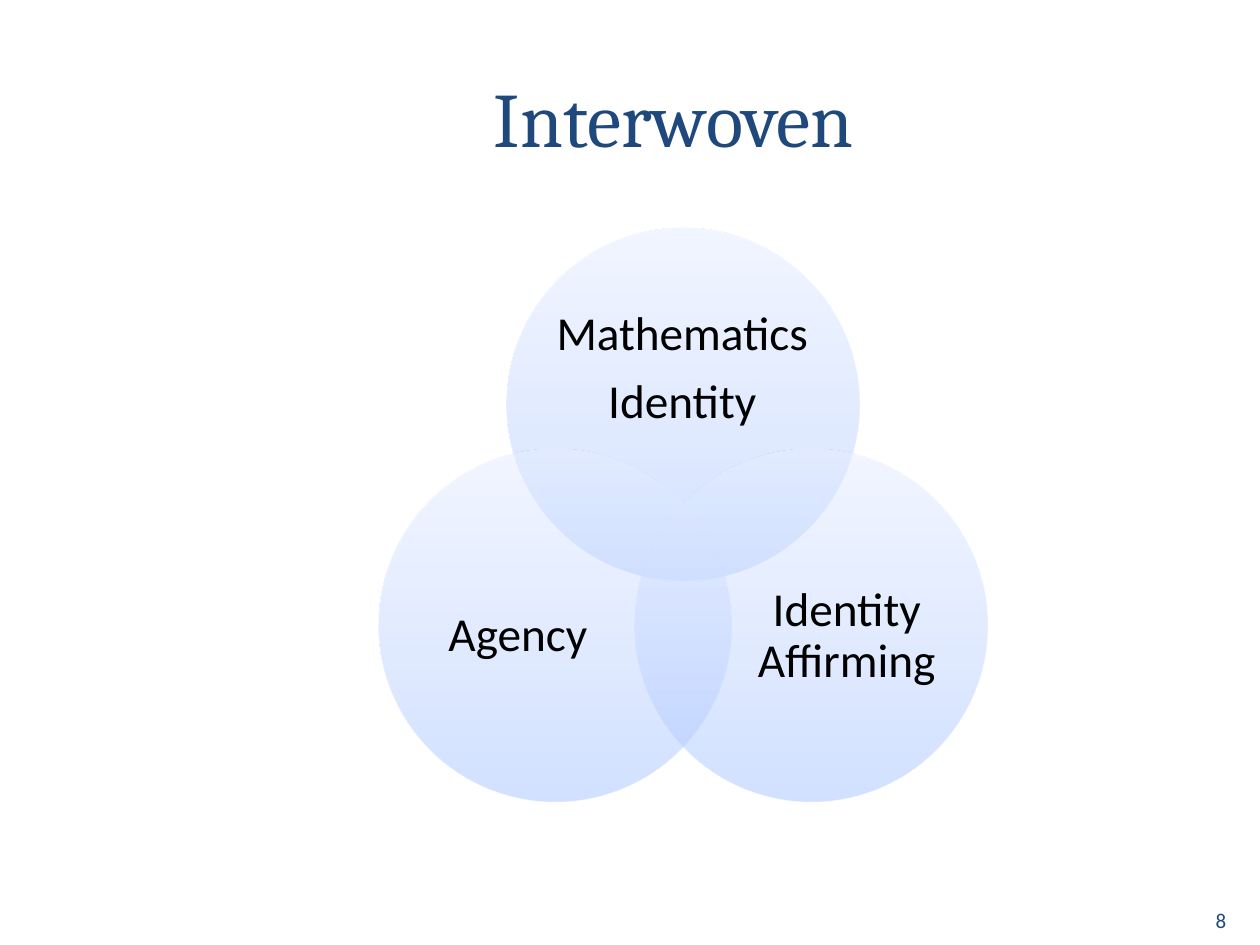
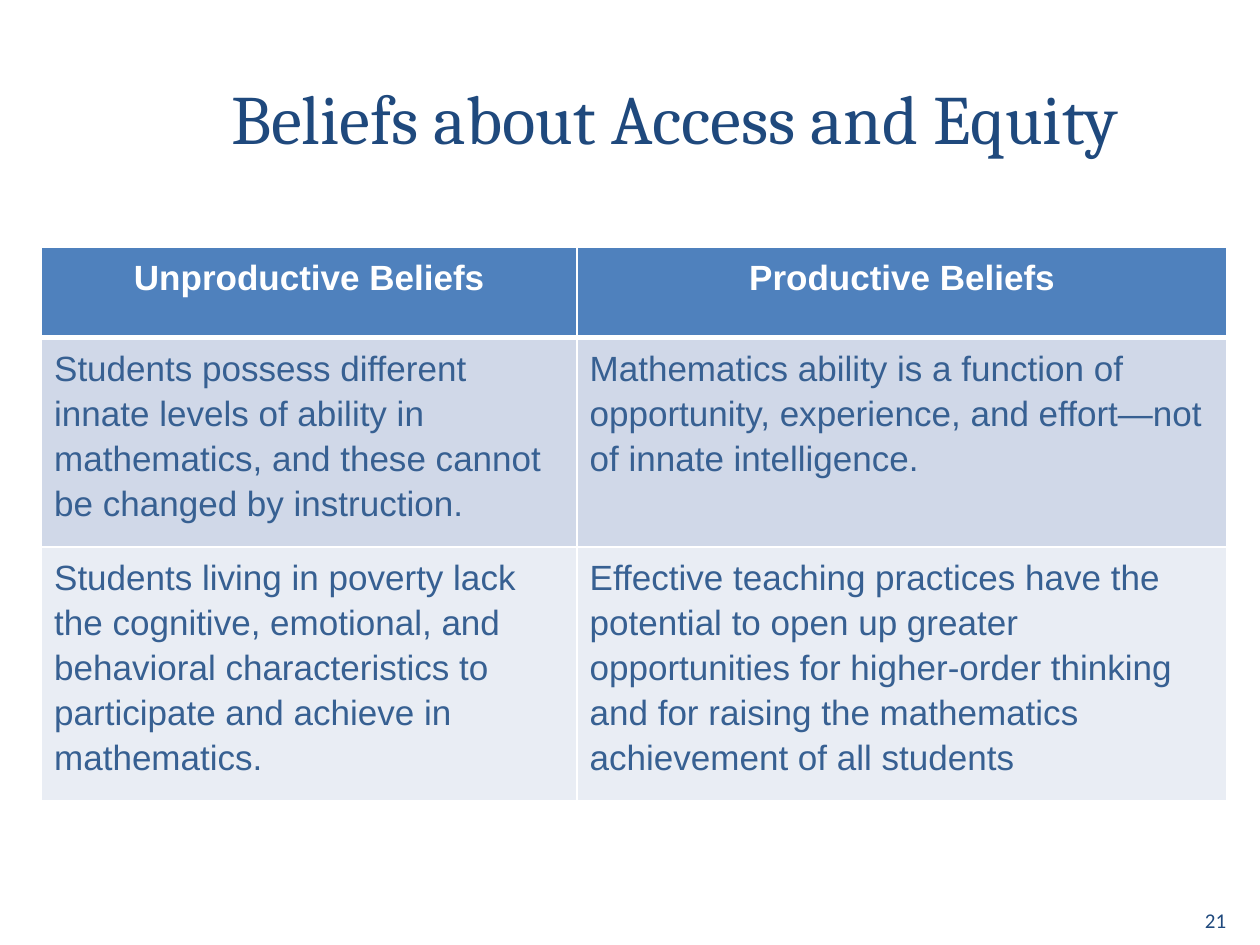
import math
from dataclasses import dataclass

from lxml import etree
from pptx import Presentation
from pptx import util as u
from pptx.dml.color import RGBColor
from pptx.enum import shapes, text
from pptx.oxml.ns import qn
from pptx.util import Inches

COLORS = {
    "navy": "1F497D",
    "black": "000000",
    "white": "FFFFFF",
    "header": "4F81BD",
    "body_text": "376092",
    "band_dark": "D0D8E8",
    "band_light": "E9EDF4",
    "circle_deep": "A4C4FF",
    "circle_mid": "BFD4FF",
    "circle_pale": "E6EEFF",
}
TITLE_FONT, LABEL_FONT, TABLE_FONT = "Cambria", "Calibri", "Arial"
CIRCLE_STOPS = [(0, "circle_deep"), (35, "circle_mid"), (100, "circle_pale")]
CIRCLE_SIZE = 2.8
RING_CENTER, RING_RADIUS = (5.42, 4.38), 1.17


@dataclass
class Box:
    left: float
    top: float
    width: float
    height: float

    def lengths(self) -> list:
        return [Inches(n) for n in (self.left, self.top, self.width, self.height)]


@dataclass
class TextStyle:
    font: str
    size: float
    color: str
    align: text.PP_ALIGN = text.PP_ALIGN.CENTER
    bold: bool = False
    line_spacing: float = 1.0
    space_after: float = 0


@dataclass
class VennCircle:
    angle: int
    label_box: Box
    lines: list[str]


TITLE_BOX = Box(1.33, 0.3, 8.17, 1.25)
NUMBER_BOX = Box(7.5, 7.1, 2.33, 0.4)
NUMBER_STYLE = TextStyle(LABEL_FONT, 12, "navy", text.PP_ALIGN.RIGHT)
LABEL_STYLE = TextStyle(LABEL_FONT, 27, "black", line_spacing=0.9, space_after=9.45)
HEADER_STYLE = TextStyle(TABLE_FONT, 20, "white", bold=True, line_spacing=1.15)
BODY_STYLE = TextStyle(TABLE_FONT, 20, "body_text", text.PP_ALIGN.LEFT, line_spacing=1.15)

CIRCLES = [
    VennCircle(-90, Box(4.39, 2.3, 2.05, 1.26), ["Mathematics", "Identity"]),
    VennCircle(30, Box(5.88, 4.28, 1.68, 1.54), ["Identity Affirming"]),
    VennCircle(150, Box(3.27, 4.28, 1.68, 1.54), ["Agency"]),
]

TABLE_BOX = Box(0.33, 1.96, 9.41, 4.35)
COLUMN_WIDTHS = [4.25, 5.16]
ROW_HEIGHTS = [0.72, 1.66, 1.97]
ROW_FILLS = ["header", "band_dark", "band_light"]
BELIEFS = [
    ("Unproductive Beliefs", "Productive Beliefs"),
    (
        "Students possess different innate levels of ability in mathematics, "
        "and these cannot be changed by instruction.",
        "Mathematics ability is a function of opportunity, experience, "
        "and effort—not of innate intelligence.",
    ),
    (
        "Students living in poverty lack the cognitive, emotional, and behavioral "
        "characteristics to participate and achieve in mathematics.",
        "Effective teaching practices have the potential to open up greater "
        "opportunities for higher-order thinking and for raising the mathematics "
        "achievement of all students",
    ),
]


def rgb(name: str) -> RGBColor:
    return RGBColor.from_string(COLORS[name])


def write_lines(frame, lines: list[str], style: TextStyle) -> None:
    frame.text = "\n".join(lines)
    for paragraph in frame.paragraphs:
        paragraph.alignment = style.align
        paragraph.line_spacing = style.line_spacing
        paragraph.space_after = u.Pt(style.space_after)
        paragraph.font.name = style.font
        paragraph.font.size = u.Pt(style.size)
        paragraph.font.bold = style.bold
        paragraph.font.color.rgb = rgb(style.color)


def add_text(slide, box: Box, lines: list[str], style: TextStyle, inset: bool = True) -> None:
    frame = slide.shapes.add_textbox(*box.lengths()).text_frame
    frame.word_wrap = True
    frame.vertical_anchor = text.MSO_ANCHOR.MIDDLE
    if not inset:
        frame.margin_left = frame.margin_right = frame.margin_top = frame.margin_bottom = 0
    write_lines(frame, lines, style)


def add_base_slide(presentation, title: str, title_size: float, number: int):
    """Add a blank slide with the shared title and slide number."""
    slide = presentation.slides.add_slide(presentation.slide_layouts[6])
    add_text(slide, TITLE_BOX, [title], TextStyle(TITLE_FONT, title_size, "navy"))
    add_text(slide, NUMBER_BOX, [str(number)], NUMBER_STYLE)
    return slide


def fill_translucent_gradient(shape) -> None:
    shape.fill.gradient()
    shape.fill.gradient_angle = 90
    stops = shape._element.spPr.find(qn("a:gradFill")).find(qn("a:gsLst"))
    for stop in list(stops):
        stops.remove(stop)
    for position, color in CIRCLE_STOPS:
        stop = etree.SubElement(stops, qn("a:gs"), pos=str(position * 1000))
        tint = etree.SubElement(stop, qn("a:srgbClr"), val=COLORS[color])
        etree.SubElement(tint, qn("a:alpha"), val="50000")


def add_venn_circle(slide, circle: VennCircle) -> None:
    angle = math.radians(circle.angle)
    left = RING_CENTER[0] + RING_RADIUS * math.cos(angle) - CIRCLE_SIZE / 2
    top = RING_CENTER[1] + RING_RADIUS * math.sin(angle) - CIRCLE_SIZE / 2
    box = Box(left, top, CIRCLE_SIZE, CIRCLE_SIZE)
    shape = slide.shapes.add_shape(shapes.MSO_SHAPE.OVAL, *box.lengths())
    shape.shadow.inherit = False
    shape.line.fill.background()
    fill_translucent_gradient(shape)
    add_text(slide, circle.label_box, circle.lines, LABEL_STYLE, inset=False)


def set_borders(cell, widths: dict[str, int]) -> None:
    properties = cell._tc.get_or_add_tcPr()
    for index, (side, width) in enumerate(widths.items()):
        line = etree.Element(qn(f"a:{side}"), w=str(u.Pt(width)))
        fill = etree.SubElement(line, qn("a:solidFill"))
        etree.SubElement(fill, qn("a:srgbClr"), val=COLORS["white"])
        properties.insert(index, line)


def add_beliefs_table(slide) -> None:
    table = slide.shapes.add_table(
        len(ROW_HEIGHTS), len(COLUMN_WIDTHS), *TABLE_BOX.lengths()
    ).table
    for column, width in zip(table.columns, COLUMN_WIDTHS):
        column.width = Inches(width)
    for row_index, (row, height) in enumerate(zip(table.rows, ROW_HEIGHTS)):
        row.height = Inches(height)
        style = BODY_STYLE if row_index else HEADER_STYLE
        # The rule between header and body is thicker than the others
        top = 3 if row_index == 1 else 1
        bottom = 3 if row_index == 0 else 1
        for cell, belief in zip(row.cells, BELIEFS[row_index]):
            cell.fill.solid()
            cell.fill.fore_color.rgb = rgb(ROW_FILLS[row_index])
            write_lines(cell.text_frame, [belief], style)
            set_borders(cell, {"lnL": 1, "lnR": 1, "lnT": top, "lnB": bottom})


def main() -> None:
    presentation = Presentation()
    presentation.slide_width, presentation.slide_height = Inches(10), Inches(7.5)

    # Venn diagram
    slide = add_base_slide(presentation, "Interwoven ", 44, 8)
    for circle in CIRCLES:
        add_venn_circle(slide, circle)

    # Table of beliefs
    slide = add_base_slide(presentation, "Beliefs about Access and Equity ", 39.6, 21)
    add_beliefs_table(slide)

    presentation.save("out.pptx")


if __name__ == "__main__":
    main()
